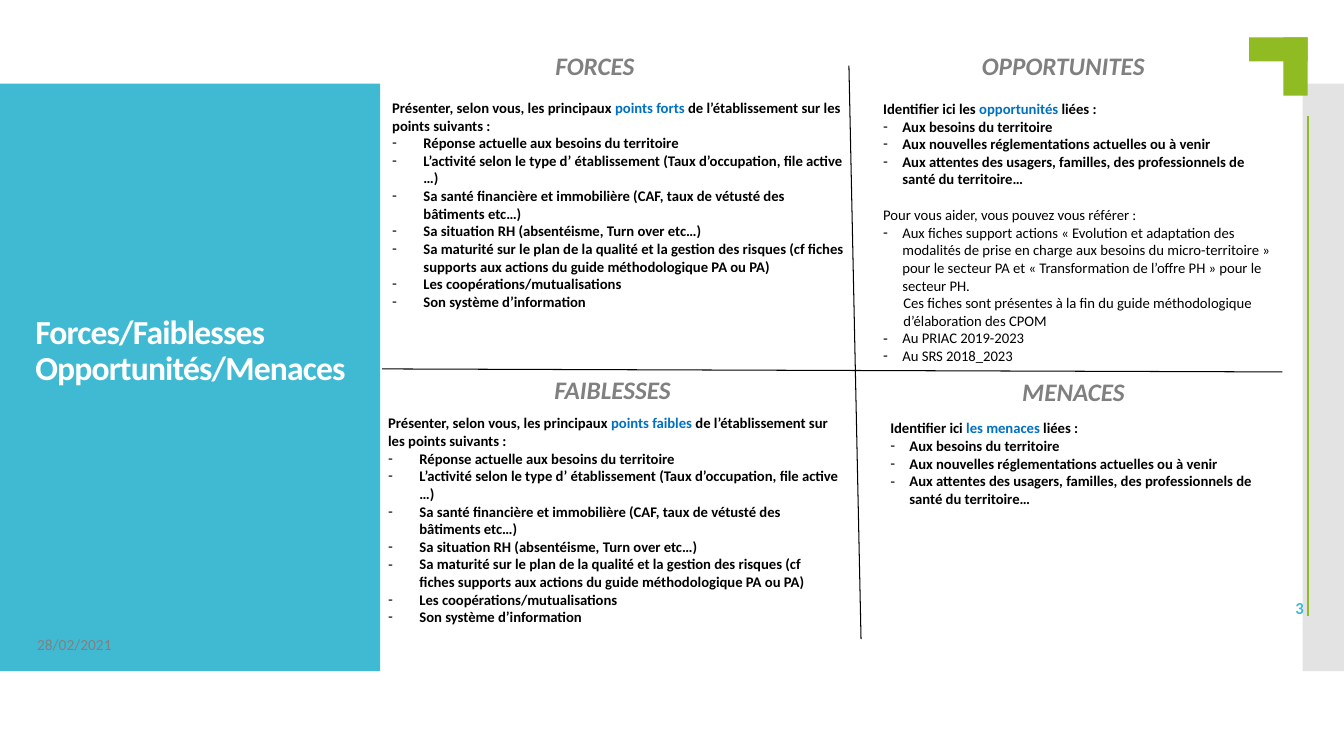
from dataclasses import dataclass

from lxml.etree import SubElement
from pptx import Presentation
from pptx.dml.color import RGBColor
from pptx.enum.shapes import MSO_CONNECTOR, MSO_SHAPE
from pptx.enum.text import MSO_ANCHOR, MSO_AUTO_SIZE, PP_ALIGN
from pptx.oxml.ns import qn
from pptx.util import Inches, Pt


@dataclass(frozen=True)
class Theme:
    font: str = "Calibri"
    teal: str = "40BAD2"
    green: str = "90BB23"
    blue: str = "0070C0"
    gray: str = "808080"
    pale: str = "C8C8C8"
    black: str = "000000"
    white: str = "FFFFFF"
    title: float = 24
    head: float = 18
    body: float = 10.5
    page: float = 12
    date: float = 11


THEME = Theme()

# Wording: a lead line with one blue part, then dash items
POINTS = [
    "Réponse actuelle aux besoins du territoire",
    "L’activité selon le type d’ établissement (Taux d’occupation, file active …)",
    "Sa santé financière et immobilière (CAF, taux de vétusté des bâtiments etc…)",
    "Sa situation RH (absentéisme, Turn over etc…)",
    "Sa maturité sur le plan de la qualité et la gestion des risques "
    "(cf fiches supports aux actions du guide méthodologique PA ou PA)",
    "Les coopérations/mutualisations",
    "Son système d’information",
]
NEEDS = [
    "Aux besoins du territoire",
    "Aux nouvelles réglementations actuelles ou à venir",
    "Aux attentes des usagers, familles, des professionnels de santé du territoire…",
]
SHOW = "Présenter, selon vous, les principaux "
ABOUT = "de l’établissement sur les points suivants :"
HELP = "Pour vous aider, vous pouvez vous référer :"
SHEETS = ("Aux fiches support actions « Evolution et adaptation des modalités de "
          "prise en charge aux besoins du micro-territoire » pour le secteur PA et "
          "« Transformation de l’offre PH » pour le secteur PH.")
NOTE = ("Ces fiches sont présentes à la fin du guide méthodologique "
        "d’élaboration des CPOM")
PLANS = ["Au PRIAC 2019-2023", "Au SRS 2018_2023"]

# Quadrants: heading, heading box, lead, items, dash indent, list box
QUADS = [
    ("FORCES", (5.41, 0.45, 1.38, 0.4), (SHOW, "points forts ", ABOUT),
     POINTS, 0.31, (3.79, 0.93, 4.71, 2.57)),
    ("FAIBLESSES", (5.4, 3.66, 1.73, 0.4), (SHOW, "points faibles ", ABOUT),
     POINTS, 0.31, (3.75, 4.06, 4.67, 2.57)),
    ("OPPORTUNITES", (9.64, 0.45, 2.28, 0.4),
     ("Identifier ici les ", "opportunités", " liées :"),
     NEEDS, 0.19, (8.66, 0.94, 4.11, 2.75)),
    ("MENACES", (10.04, 3.68, 2.28, 0.4),
     ("Identifier ici ", "les menaces ", "liées :"),
     NEEDS, 0.19, (8.73, 4.11, 4.04, 0.98)),
]


def place(shape, box):
    shape.left, shape.top, shape.width, shape.height = map(Inches, box)


def block(slide, box, color):
    shape = slide.shapes.add_shape(MSO_SHAPE.RECTANGLE, *map(Inches, box))
    shape.shadow.inherit = False
    shape.fill.solid()
    shape.fill.fore_color.rgb = RGBColor.from_string(color)
    shape.line.fill.background()
    return shape


def rule(slide, start, end, color, width):
    line = slide.shapes.add_connector(
        MSO_CONNECTOR.STRAIGHT, *map(Inches, start + end))
    line.line.color.rgb = RGBColor.from_string(color)
    line.line.width = Pt(width)
    SubElement(line.element.spPr, qn("a:effectLst"))


def write(para, text, size, color, bold=True, italic=False):
    run = para.add_run()
    run.text = text
    font = run.font
    font.name, font.size = THEME.font, Pt(size)
    font.bold, font.italic = bold, italic
    font.color.rgb = RGBColor.from_string(color)
    return run


def frame(shape, anchor):
    text = shape.text_frame
    text.word_wrap = True
    text.auto_size = MSO_AUTO_SIZE.NONE
    text.vertical_anchor = anchor
    return text


def label(slide, box, text, size, color, anchor=MSO_ANCHOR.TOP, **style):
    shape = slide.shapes.add_textbox(*map(Inches, box))
    para = frame(shape, anchor).paragraphs[0]
    write(para, text, size, color, **style)
    return para


def format_line(para, left=0, dash=False, gap=0):
    para.space_before, para.space_after = Pt(gap), Pt(0)
    props = para._p.get_or_add_pPr()
    props.set("marL", str(Inches(left)))
    props.set("indent", str(-Inches(left) if dash else 0))
    if dash:
        SubElement(props, qn("a:buChar"), char="-")
    else:
        SubElement(props, qn("a:buNone"))


def add_line(text, words, bold=False, **layout):
    para = text.add_paragraph()
    format_line(para, **layout)
    write(para, words, THEME.body, THEME.black, bold)


def quadrant(slide, holder, head, head_box, lead, items, indent, box):
    label(slide, head_box, head, THEME.head, THEME.gray, italic=True)
    place(holder, box)
    text = frame(holder, MSO_ANCHOR.TOP)
    para = text.paragraphs[0]
    format_line(para)
    for words, color in zip(lead, (THEME.black, THEME.blue, THEME.black)):
        write(para, words, THEME.body, color)
    for item in items:
        add_line(text, item, bold=True, left=indent, dash=True)
    return text


def sources(text):
    add_line(text, HELP, gap=12.8)
    add_line(text, SHEETS, left=0.19, dash=True)
    add_line(text, NOTE, left=0.2)
    for plan in PLANS:
        add_line(text, plan, left=0.19, dash=True)


def side_panel(slide, box):
    left, top, width, height = box
    block(slide, box, THEME.teal)
    title = slide.shapes.title
    place(title, (left + 0.25, top + 0.67, 3.33, 3.97))
    para = frame(title, MSO_ANCHOR.MIDDLE).paragraphs[0]
    para.alignment, para.line_spacing = PP_ALIGN.LEFT, 0.9
    for index, words in enumerate(("Forces/Faiblesses", "Opportunités/Menaces")):
        if index:
            para.add_line_break()
        run = write(para, words, THEME.title, THEME.white)
        run.font._element.set("spc", "-60")
    # Bring the title in front of the panel
    slide.shapes._spTree.append(title.element)
    label(slide, (left + 0.27, top + height - 0.42, 1.5, 0.3), "28/02/2021",
          THEME.date, THEME.gray, MSO_ANCHOR.MIDDLE, bold=False)


def right_edge(slide, box):
    left, top, width, height = box
    strip = block(slide, box, THEME.pale)
    tone = strip.element.spPr.find(qn("a:solidFill"))[0]
    SubElement(tone, qn("a:alpha"), val="50000")
    rule(slide, (left + 0.05, 1.15), (left + 0.05, 6.11), THEME.green, 1.5)
    # Corner mark
    block(slide, (left - 0.19, top - 0.46, 0.24, 0.58), THEME.green)
    block(slide, (left - 0.53, top - 0.46, 0.58, 0.24), THEME.green)
    page = label(slide, (left - 1.36, 5.88, 1.47, 0.31), "3",
                 THEME.page, THEME.teal, MSO_ANCHOR.MIDDLE)
    page.alignment, page.line_spacing = PP_ALIGN.RIGHT, Pt(13.1)


def main():
    deck = Presentation()
    deck.slide_width, deck.slide_height = Inches(13.33), Inches(7.5)
    slide = deck.slides.add_slide(deck.slide_layouts.get_by_name("Comparison"))
    side_panel(slide, (0, 0.83, 3.77, 5.83))
    right_edge(slide, (12.92, 0.83, 0.41, 5.83))
    # Cross between the quadrants
    rule(slide, (8.42, 0.65), (8.54, 6.34), THEME.black, 0.75)
    rule(slide, (3.79, 3.66), (12.72, 3.69), THEME.black, 0.75)
    holders = [slide.placeholders[index] for index in (1, 2, 3, 4)]
    texts = [quadrant(slide, holder, *quad)
             for holder, quad in zip(holders, QUADS)]
    sources(texts[2])
    deck.save("out.pptx")


if __name__ == "__main__":
    main()
